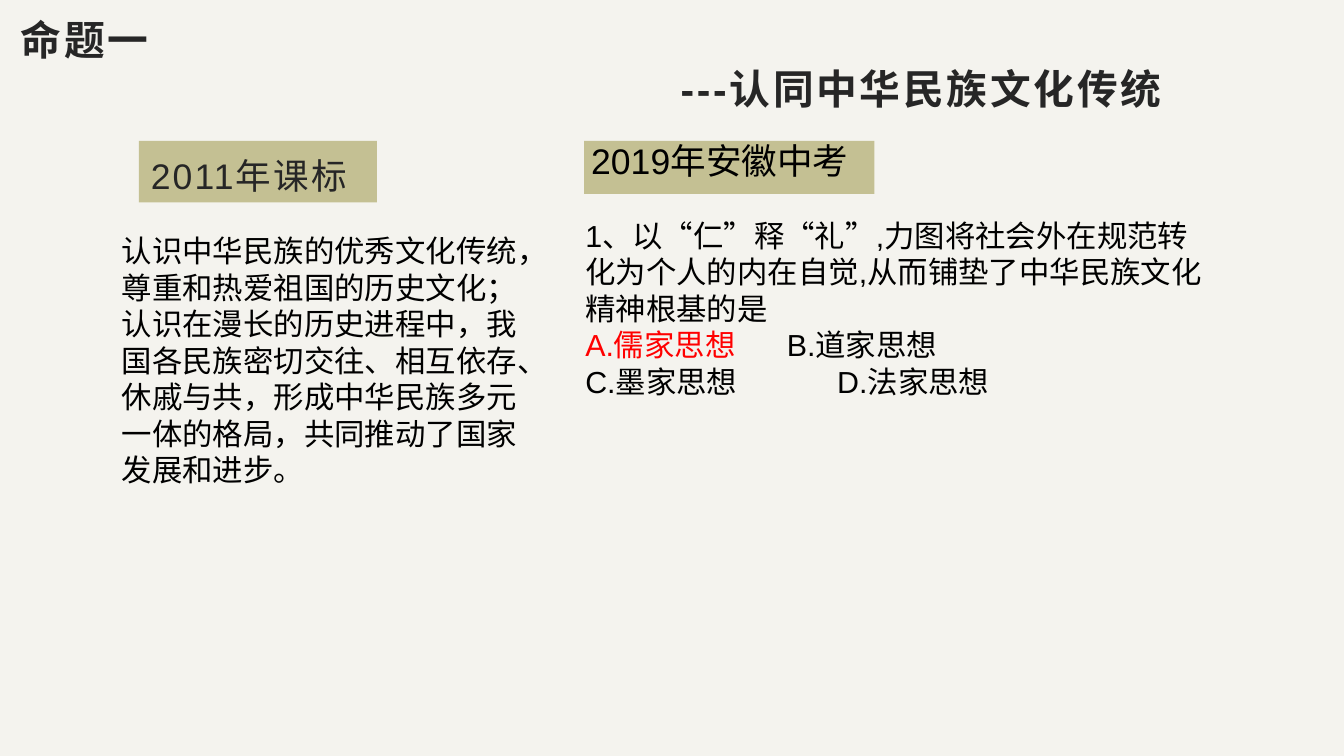
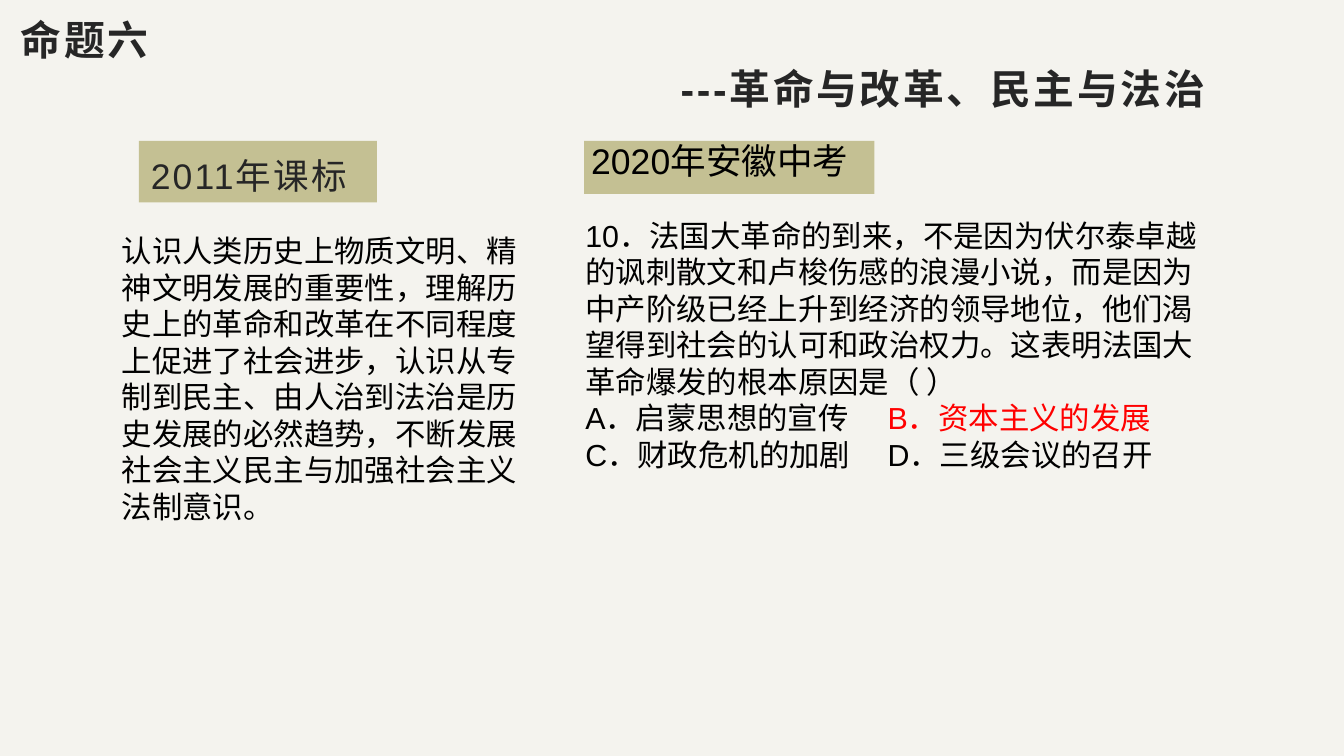
"""Build two slides that set curriculum goals beside exam questions."""
from dataclasses import dataclass

import pptx
import pptx.dml.color
import pptx.enum.lang
import pptx.enum.shapes
import pptx.enum.text
import pptx.oxml.ns
import pptx.util
from lxml import etree

Cm = pptx.util.Cm
Pt = pptx.util.Pt


@dataclass(frozen=True)
class Theme:
    """Colours, type sizes and font of the deck."""
    font: str = "Arial"
    page: str = "F4F3EE"
    band: str = "C4C093"
    heading: str = "262626"
    text: str = "000000"
    answer: str = "FF0000"
    title_size: float = 29.05
    label_size: float = 25.39
    text_size: float = 21.76


THEME = Theme()
SUBTITLE_INDENT = Cm(16.63)

TOPICS = [
    {
        "number": "命题一",
        "theme": "---认同中华民族文化传统",
        "goal": "认识中华民族的优秀文化传统，尊重和热爱祖国的历史文化；"
                "认识在漫长的历史进程中，我国各民族密切交往、相互依存、休戚与共，"
                "形成中华民族多元一体的格局，共同推动了国家发展和进步。",
        "exam": "2019年安徽中考",
        "question": "1、以“仁”释“礼”,力图将社会外在规范转化为个人的内在自觉,"
                    "从而铺垫了中华民族文化精神根基的是",
        "options": [("A.儒家思想", "B.道家思想"), ("C.墨家思想", "D.法家思想")],
        "answer": "A.儒家思想",
        "gap": "\t\t",
        "tab": Cm(7.62),
    },
    {
        "number": "命题六",
        "theme": "---革命与改革、民主与法治",
        "goal": "认识人类历史上物质文明、精神文明发展的重要性，"
                "理解历史上的革命和改革在不同程度上促进了社会进步，"
                "认识从专制到民主、由人治到法治是历史发展的必然趋势，"
                "不断发展社会主义民主与加强社会主义法制意识。",
        "exam": "2020年安徽中考",
        "question": "10．法国大革命的到来，不是因为伏尔泰卓越的讽刺散文和卢梭伤感的浪漫小说，"
                    "而是因为中产阶级已经上升到经济的领导地位，"
                    "他们渴望得到社会的认可和政治权力。这表明法国大革命爆发的根本原因是（ ）",
        "options": [("A．启蒙思想的宣传", "B．资本主义的发展"),
                    ("C．财政危机的加剧", "D．三级会议的召开")],
        "answer": "B．资本主义的发展",
        "gap": "\t",
        "tab": Cm(7.54),
    },
]


def rgb(value):
    """Return a colour object for a hex string."""
    return pptx.dml.color.RGBColor.from_string(value)


def place(box, left, top, width, height):
    """Move and size a box, with lengths in centimetres."""
    box.left, box.top, box.width, box.height = map(Cm, (left, top, width, height))


def set_frame(box, margins, auto_size=pptx.enum.text.MSO_AUTO_SIZE.NONE):
    """Set margins, wrapping and anchor of a box and return its text frame."""
    frame = box.text_frame
    frame.margin_left, frame.margin_top, frame.margin_right, frame.margin_bottom = map(Cm, margins)
    frame.word_wrap = True
    frame.auto_size = auto_size
    frame.vertical_anchor = pptx.enum.text.MSO_ANCHOR.TOP
    return frame


def format_paragraph(para, size, color, bold=False, spacing=0.0, indent=0, line=1.0):
    """Give a paragraph its font, letter spacing, left indent and line spacing."""
    font = para.font
    font.name, font.size, font.bold = THEME.font, Pt(size), bold
    font.color.rgb = rgb(color)
    font.language_id = pptx.enum.lang.MSO_LANGUAGE_ID.SIMPLIFIED_CHINESE
    para.alignment = pptx.enum.text.PP_ALIGN.LEFT
    para.line_spacing = line
    para.space_before = Pt(0)
    properties = para._p.get_or_add_pPr()
    properties.set("marL", str(indent))
    properties.set("indent", "0")
    defaults = properties.find(pptx.oxml.ns.qn("a:defRPr"))
    defaults.set("spc", str(round(spacing * 100)))
    defaults.addprevious(etree.Element(pptx.oxml.ns.qn("a:buNone")))


def add_tab_stop(para, position):
    """Add a left tab stop to a formatted paragraph."""
    stops = etree.Element(pptx.oxml.ns.qn("a:tabLst"))
    etree.SubElement(stops, pptx.oxml.ns.qn("a:tab"), pos=str(position), algn="l")
    para._p.pPr.find(pptx.oxml.ns.qn("a:defRPr")).addprevious(stops)


def fill_title(title, number, theme):
    """Write the topic number with its theme indented below."""
    place(title, 0.25, 0.28, 33.35, 1.63)
    frame = set_frame(title, (0.27, 0.1, 0.2, 0.1))
    frame.text = f"{number}\n{theme}"
    for para, indent in zip(frame.paragraphs, (0, SUBTITLE_INDENT)):
        format_paragraph(para, THEME.title_size, THEME.heading, True, 2, indent)


def fill_label(box, text, margins, color, spacing, line):
    """Write a column heading on a coloured band."""
    box.fill.solid()
    box.fill.fore_color.rgb = rgb(THEME.band)
    box.line.fill.background()
    frame = set_frame(box, margins)
    frame.text = text
    format_paragraph(frame.paragraphs[0], THEME.label_size, color, spacing=spacing, line=line)


def add_text(page, text, left, top, width, height):
    """Add a text box that grows with its text and return its frame."""
    box = page.shapes.add_textbox(Cm(left), Cm(top), Cm(width), Cm(height))
    frame = set_frame(box, (0.25, 0.13, 0.25, 0.13),
                      pptx.enum.text.MSO_AUTO_SIZE.SHAPE_TO_FIT_TEXT)
    frame.text = text
    format_paragraph(frame.paragraphs[0], THEME.text_size, THEME.text)
    return frame


def add_options(frame, topic):
    """Add rows of two options, with the answer in its own colour."""
    for first, second in topic["options"]:
        para = frame.add_paragraph()
        format_paragraph(para, THEME.text_size, THEME.text)
        add_tab_stop(para, topic["tab"])
        for text in (first, topic["gap"], second):
            span = para.add_run()
            span.text = text
            if text == topic["answer"]:
                span.font.color.rgb = rgb(THEME.answer)


def add_topic(deck, topic):
    """Add one slide with the goal on the left and the question on the right."""
    page = deck.slides.add_slide(deck.slide_layouts[1])
    fill_title(page.shapes.title, topic["number"], topic["theme"])

    goal_label = page.placeholders[1]
    place(goal_label, 3.5, 3.55, 6, 1.55)
    fill_label(goal_label, "2011年课标", (0.3, 0, 0.23, 0), THEME.heading, 1.5, 1.3)
    add_text(page, topic["goal"], 2.82, 5.72, 10.6, 6.78)

    exam_label = page.shapes.add_shape(pptx.enum.shapes.MSO_SHAPE.RECTANGLE,
                                       Cm(14.72), Cm(3.55), Cm(7.32), Cm(1.34))
    exam_label.shadow.inherit = False
    fill_label(exam_label, topic["exam"], (0.18, 0.07, 0.18, 0.07), THEME.text, 0, 0.9)
    question = add_text(page, topic["question"], 14.5, 5.33, 16.08, 4.9)
    add_options(question, topic)


def main():
    """Build and save the deck."""
    deck = pptx.Presentation()
    deck.slide_width, deck.slide_height = Cm(33.87), Cm(19.05)
    background = deck.slide_master.background.fill
    background.solid()
    background.fore_color.rgb = rgb(THEME.page)
    for topic in TOPICS:
        add_topic(deck, topic)
    deck.save("out.pptx")


if __name__ == "__main__":
    main()
